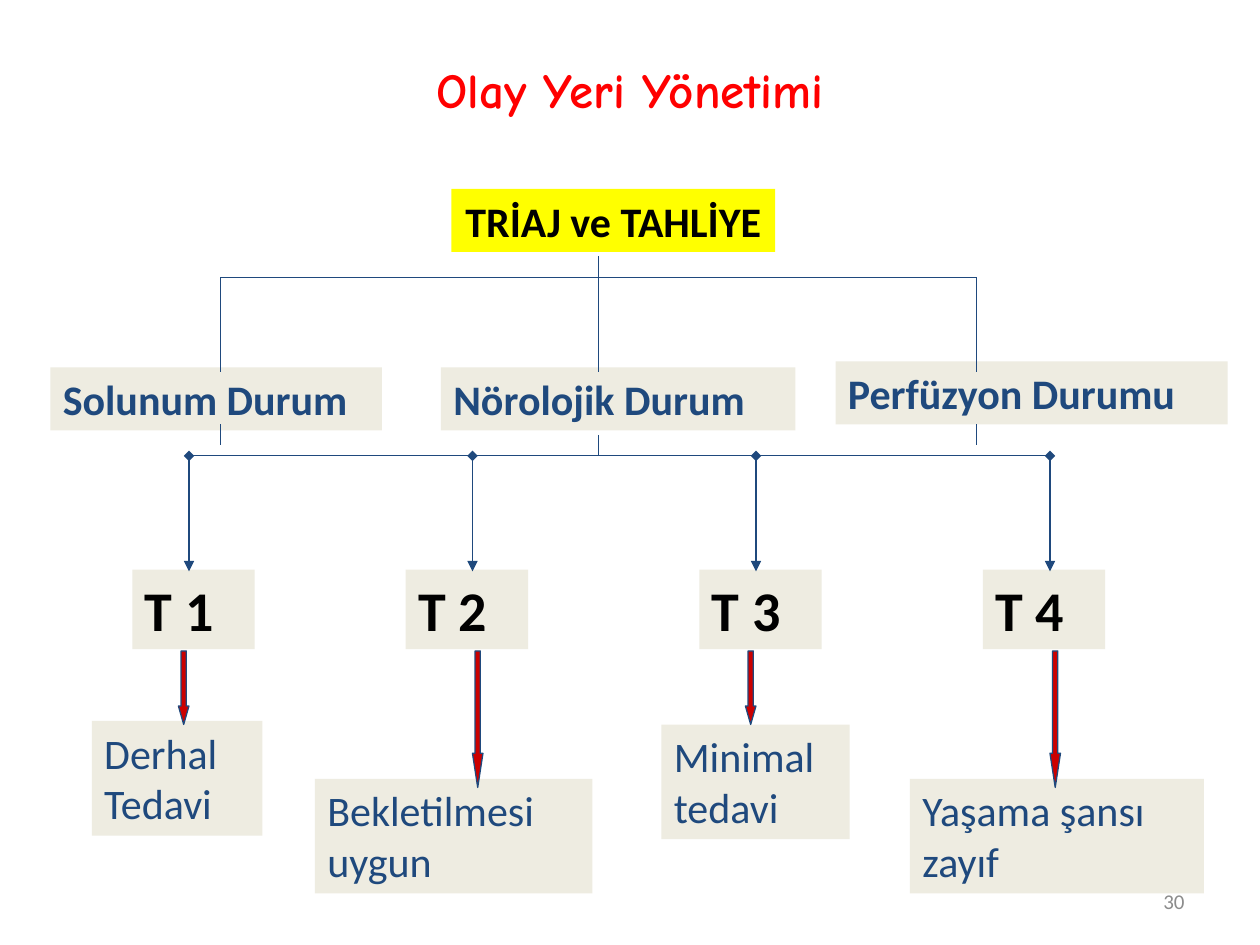
from lxml import etree
from pptx import Presentation
from pptx.dml.color import RGBColor
from pptx.enum.shapes import MSO_CONNECTOR, MSO_SHAPE
from pptx.enum.text import MSO_ANCHOR, PP_ALIGN
from pptx.oxml.ns import qn
from pptx.util import Pt

STRAIGHT = MSO_CONNECTOR.STRAIGHT
DOWN_ARROW = MSO_SHAPE.DOWN_ARROW
MIDDLE, TOP = MSO_ANCHOR.MIDDLE, MSO_ANCHOR.TOP
LEFT, CENTER, RIGHT = PP_ALIGN.LEFT, PP_ALIGN.CENTER, PP_ALIGN.RIGHT

NAVY, BEIGE, YELLOW, RED = "1F497D", "EEECE1", "FFFF00", "CC0000"
BLACK, GREY, TITLE_RED = "000000", "8C8C8C", "FF0000"

TITLE = ("Olay Yeri Yönetimi", (18, -12, 684, 126))
ROOT = ("TRİAJ ve TAHLİYE", (258, 108, 185, 36))
PAGE_NUMBER = ("30", (516, 500.5, 168, 28.75))
ASSESSMENTS = [
    ("Solunum Durum", (28.8, 210, 189.5, 36), 126, (242.5, 254.5)),
    ("Nörolojik Durum", (252, 210, 202.5, 36), 342, (248.5, 260.5)),
    ("Perfüzyon Durumu", (477.5, 206.5, 224, 36), 558, (242.5, 254.5)),
]
CATEGORIES = [
    ("T 1", 75.6, 108, 102, 42, "Derhal\nTedavi", (52.5, 412, 97.5)),
    ("T 2", 231.8, 270, 270, 78, "Bekletilmesi\nuygun", (180, 445, 158.5)),
    ("T 3", 399.6, 432, 426, 42, "Minimal\ntedavi", (378, 414, 107.5)),
    ("T 4", 561.6, 600, 600, 78, "Yaşama şansı\nzayıf", (520, 445, 168)),
]
TRUNK_X, TRUNK_TOP = 342, 146.5
UPPER_BAR, ASSESSMENT_TOP = 158.5, 212.5
LOWER_BAR, CATEGORY_TOP = 260.5, 326.5
CATEGORY_Y, CATEGORY_WIDTH, CATEGORY_HEIGHT = 325.5, 70, 45.5
OUTCOME_HEIGHT = 65.5
ARROW_Y, ARROW_WIDTH = 372, 6


def color(value):
    return RGBColor.from_string(value)


def write(shape, text, size, text_color, bold=False, align=LEFT,
          anchor=TOP, font_name="Calibri", wrap=True):
    frame = shape.text_frame
    frame.text = text
    frame.word_wrap = wrap
    frame.vertical_anchor = anchor
    for paragraph in frame.paragraphs:
        paragraph.alignment = align
        for run in paragraph.runs:
            run.font.name = font_name
            run.font.size = Pt(size)
            run.font.bold = bold
            run.font.color.rgb = color(text_color)


def add_box(slide, text, bounds, size, text_color, fill=None, **style):
    box = slide.shapes.add_textbox(*map(Pt, bounds))
    if fill:
        box.fill.solid()
        box.fill.fore_color.rgb = color(fill)
    write(box, text, size, text_color, **style)


def add_line(slide, start, end, arrow=False):
    line = slide.shapes.add_connector(STRAIGHT, *map(Pt, start + end))
    line.line.color.rgb = color(NAVY)
    line.line.width = Pt(0.75)
    properties = line._element.spPr
    if arrow:
        outline = properties.find(qn("a:ln"))
        etree.SubElement(outline, qn("a:headEnd"), type="diamond")
        etree.SubElement(outline, qn("a:tailEnd"), type="triangle")
    etree.SubElement(properties, qn("a:effectLst"))


def add_block_arrow(slide, x, height):
    arrow = slide.shapes.add_shape(
        DOWN_ARROW, Pt(x), Pt(ARROW_Y), Pt(ARROW_WIDTH), Pt(height))
    arrow.shadow.inherit = False
    arrow.adjustments[0] = 0.5
    arrow.adjustments[1] = height / ARROW_WIDTH / 4
    arrow.fill.solid()
    arrow.fill.fore_color.rgb = color(RED)
    arrow.line.color.rgb = color(NAVY)
    arrow.line.width = Pt(0.75)


def main():
    presentation = Presentation()
    presentation.slide_width, presentation.slide_height = Pt(720), Pt(540)
    slide = presentation.slides.add_slide(presentation.slide_layouts[5])

    text, bounds = TITLE
    title = slide.shapes.title
    title.left, title.top, title.width, title.height = map(Pt, bounds)
    write(title, text, 28, TITLE_RED, bold=True, align=CENTER,
          anchor=MIDDLE, font_name="Comic Neue")

    add_box(slide, *PAGE_NUMBER, 12, GREY, align=RIGHT, anchor=MIDDLE)
    add_box(slide, *ROOT, 24, BLACK, YELLOW, bold=True, align=CENTER, wrap=False)

    add_line(slide, (TRUNK_X, TRUNK_TOP), (TRUNK_X, UPPER_BAR))
    for text, bounds, x, (stub_top, stub_bottom) in ASSESSMENTS:
        add_box(slide, text, bounds, 24, NAVY, BEIGE, bold=True)
        if x != TRUNK_X:
            add_line(slide, (TRUNK_X, UPPER_BAR), (x, UPPER_BAR))
        add_line(slide, (x, UPPER_BAR), (x, ASSESSMENT_TOP))
        add_line(slide, (x, stub_top), (x, stub_bottom))

    for end in (CATEGORIES[0][2], CATEGORIES[-1][2]):
        add_line(slide, (TRUNK_X, LOWER_BAR), (end, LOWER_BAR))

    for label, left, line_x, arrow_x, length, outcome, place in CATEGORIES:
        bounds = (left, CATEGORY_Y, CATEGORY_WIDTH, CATEGORY_HEIGHT)
        add_box(slide, label, bounds, 32, BLACK, BEIGE, bold=True)
        add_line(slide, (line_x, LOWER_BAR), (line_x, CATEGORY_TOP), arrow=True)
        add_box(slide, outcome, place + (OUTCOME_HEIGHT,), 24, NAVY, BEIGE)
        add_block_arrow(slide, arrow_x, length)

    presentation.save("out.pptx")


if __name__ == "__main__":
    main()
